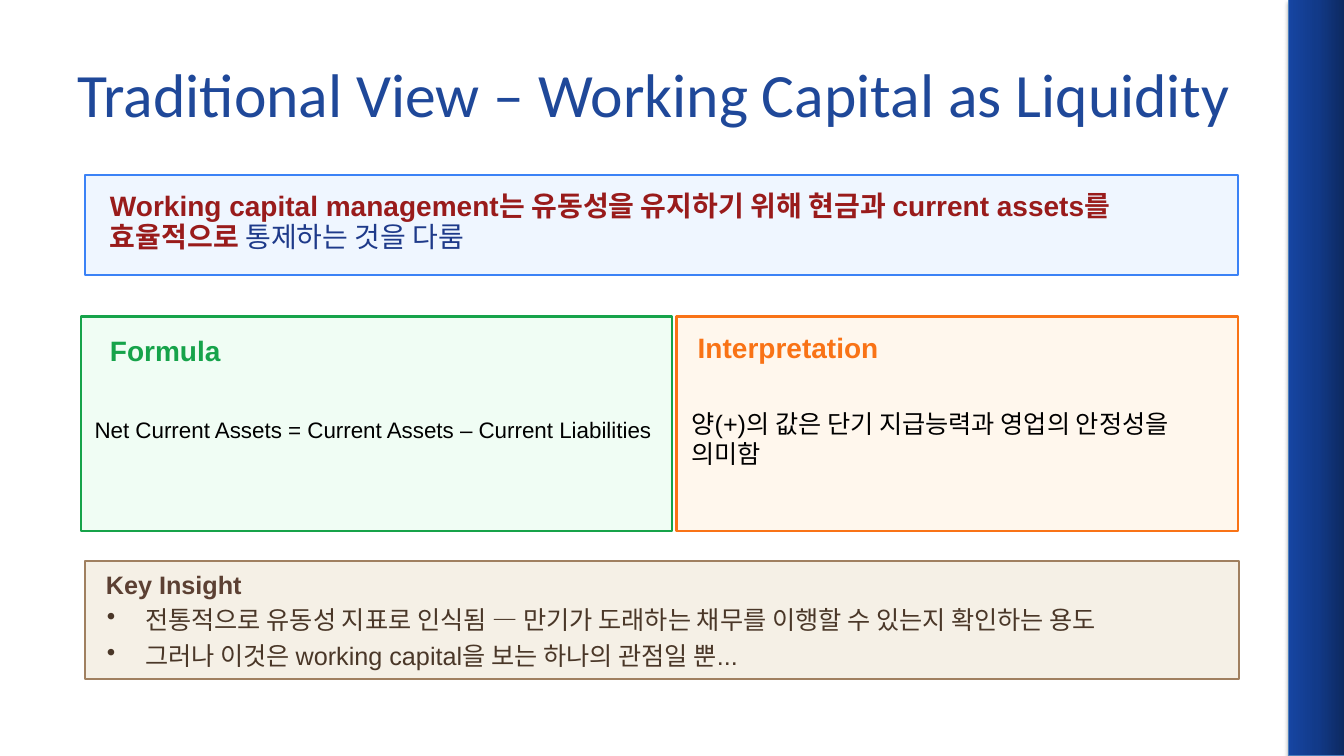
from copy import deepcopy
from dataclasses import dataclass

from lxml.etree import SubElement
from pptx import Presentation
from pptx.dml.color import RGBColor
from pptx.enum.shapes import MSO_SHAPE
from pptx.enum.text import MSO_ANCHOR
from pptx.oxml.ns import qn
from pptx.util import Inches, Pt

WHITE = RGBColor(0xFF, 0xFF, 0xFF)
BLACK = RGBColor(0, 0, 0)
NAVY = RGBColor(0x1F, 0x48, 0x99)
INK = RGBColor(0x1E, 0x3A, 0x8A)
RED = RGBColor(0x99, 0x1B, 0x1B)
BLUE = RGBColor(0x3B, 0x82, 0xF6)
SKY = RGBColor(0xEF, 0xF6, 0xFF)
GREEN = RGBColor(0x16, 0xA3, 0x4A)
MINT = RGBColor(0xF0, 0xFD, 0xF4)
ORANGE = RGBColor(0xF9, 0x73, 0x16)
PEACH = RGBColor(0xFF, 0xF7, 0xED)
TAN = RGBColor(0xA0, 0x80, 0x60)
CREAM = RGBColor(0xF5, 0xF0, 0xE6)
BROWN = RGBColor(0x5C, 0x40, 0x33)
UMBER = RGBColor(0x4A, 0x37, 0x28)
EDGE = RGBColor(0x4B, 0x7E, 0xBC)
FADE = ((0, RGBColor(0x0D, 0x29, 0x60)),
        (0.5, RGBColor(0x12, 0x3A, 0x89)),
        (1, RGBColor(0x16, 0x45, 0xA2)))

Area = tuple[float, float, float, float]


@dataclass
class Panel:
    area: Area
    fill: RGBColor
    line: RGBColor


@dataclass
class Label:
    area: Area
    lines: list[list[tuple[str, RGBColor, bool]]]
    size: int
    font: str = "Arial"
    pad: tuple[float, float] = (0.1, 0.05)
    mid: bool = True
    after: int = 0
    lead: float = 0
    dots: bool = False
    shift: float = 0


PANELS = [
    Panel((0.84, 1.74, 11.44, 0.99), SKY, BLUE),
    Panel((0.84, 5.57, 11.45, 1.17), CREAM, TAN),
    Panel((0.8, 3.14, 5.87, 2.13), MINT, GREEN),
    Panel((6.71, 3.14, 5.57, 2.13), PEACH, ORANGE),
]

LABELS = [
    Label((0.67, 0.3, 12, 1.25),
          [[("Traditional View – Working Capital as Liquidity", NAVY, False)]],
          44, font="Calibri"),
    Label((1.09, 1.89, 10.85, 0.39),
          [[("Working capital management는 유동성을 유지하기 위해 현금과 "
             "current assets를 효율적으로 ", RED, True),
            ("통제하는 것을 다룸", INK, False)]],
          20, pad=(0, 0), mid=False, after=8, lead=22.4),
    Label((1.05, 5.65, 11.07, 0.35), [[("Key Insight", BROWN, True)]],
          18, pad=(0, 0), mid=False),
    Label((1.06, 6, 11.01, 0.54),
          [[("전통적으로 유동성 지표로 인식됨 — 만기가 도래하는 채무를 "
             "이행할 수 있는지 확인하는 용도", UMBER, False)],
           [("그러나 이것은 working capital을 보는 하나의 관점일 뿐...",
             UMBER, False)]],
          18, pad=(0, 0), mid=False, after=4, dots=True),
    Label((0.84, 3.11, 5.62, 0.73), [[("Formula", GREEN, True)]], 20, shift=0.15),
    Label((0.84, 3.84, 5.77, 0.84),
          [[("Net Current Assets = Current Assets – Current Liabilities",
             BLACK, False)]], 16),
    Label((6.67, 3.08, 5.35, 0.73), [[("Interpretation", ORANGE, True)]],
          20, shift=0.15),
    Label((6.76, 3.93, 5.52, 0.84),
          [[("양(+)의 값은 단기 지급능력과 영업의 안정성을 의미함", BLACK, False)]],
          18, after=4),
]


def add_bar(slide) -> None:
    bar = slide.shapes.add_shape(
        MSO_SHAPE.RECTANGLE, *map(Inches, (12.78, 0, 0.56, 7.5)))
    bar.line.color.rgb = EDGE
    bar.line.width = Pt(0.75)
    bar.fill.gradient()
    bar.fill.gradient_angle = 180
    # Third gradient stop
    props = bar._element.spPr
    stops = props.find(".//" + qn("a:gsLst"))
    stops.append(deepcopy(stops[0]))
    for stop, (place, color) in zip(bar.fill.gradient_stops, FADE):
        stop.position = place
        stop.color.rgb = color
    # Soft shadow
    bar.shadow.inherit = False
    glow = SubElement(props.find(qn("a:effectLst")), qn("a:outerShdw"),
                      blurRad=str(Pt(3.1)), dist=str(Pt(1.8)),
                      dir="5400000", rotWithShape="0")
    tone = SubElement(glow, qn("a:srgbClr"), val=str(BLACK))
    SubElement(tone, qn("a:alpha"), val="35000")


def add_panel(slide, panel: Panel) -> None:
    box = slide.shapes.add_shape(MSO_SHAPE.RECTANGLE, *map(Inches, panel.area))
    box.shadow.inherit = False
    box.fill.solid()
    box.fill.fore_color.rgb = panel.fill
    box.line.color.rgb = panel.line
    box.line.width = Pt(1.5)


def add_label(slide, label: Label) -> None:
    frame = slide.shapes.add_textbox(*map(Inches, label.area)).text_frame
    frame.word_wrap = True
    frame.vertical_anchor = MSO_ANCHOR.MIDDLE if label.mid else MSO_ANCHOR.TOP
    side, end = map(Inches, label.pad)
    frame.margin_left = side + Inches(label.shift)
    frame.margin_right = side
    frame.margin_top = frame.margin_bottom = end
    for i, parts in enumerate(label.lines):
        para = frame.add_paragraph() if i else frame.paragraphs[0]
        para.space_after = Pt(label.after)
        if label.lead:
            para.line_spacing = Pt(label.lead)
        if label.dots:
            props = para._p.get_or_add_pPr()
            props.set("marL", str(Inches(0.38)))
            props.set("indent", str(-Inches(0.38)))
            SubElement(props, qn("a:buChar"), char="•")
        para.font.name = label.font
        para.font.size = Pt(label.size)
        same = len(parts) == 1
        for text, color, bold in parts:
            run = para.add_run()
            run.text = text
            font = para.font if same else run.font
            font.color.rgb = color
            font.bold = bold


def main() -> None:
    deck = Presentation()
    deck.slide_width, deck.slide_height = Inches(13.33), Inches(7.5)
    slide = deck.slides.add_slide(deck.slide_layouts[6])
    slide.background.fill.solid()
    slide.background.fill.fore_color.rgb = WHITE
    add_bar(slide)
    for panel in PANELS:
        add_panel(slide, panel)
    for label in LABELS:
        add_label(slide, label)
    deck.save("out.pptx")


if __name__ == "__main__":
    main()
